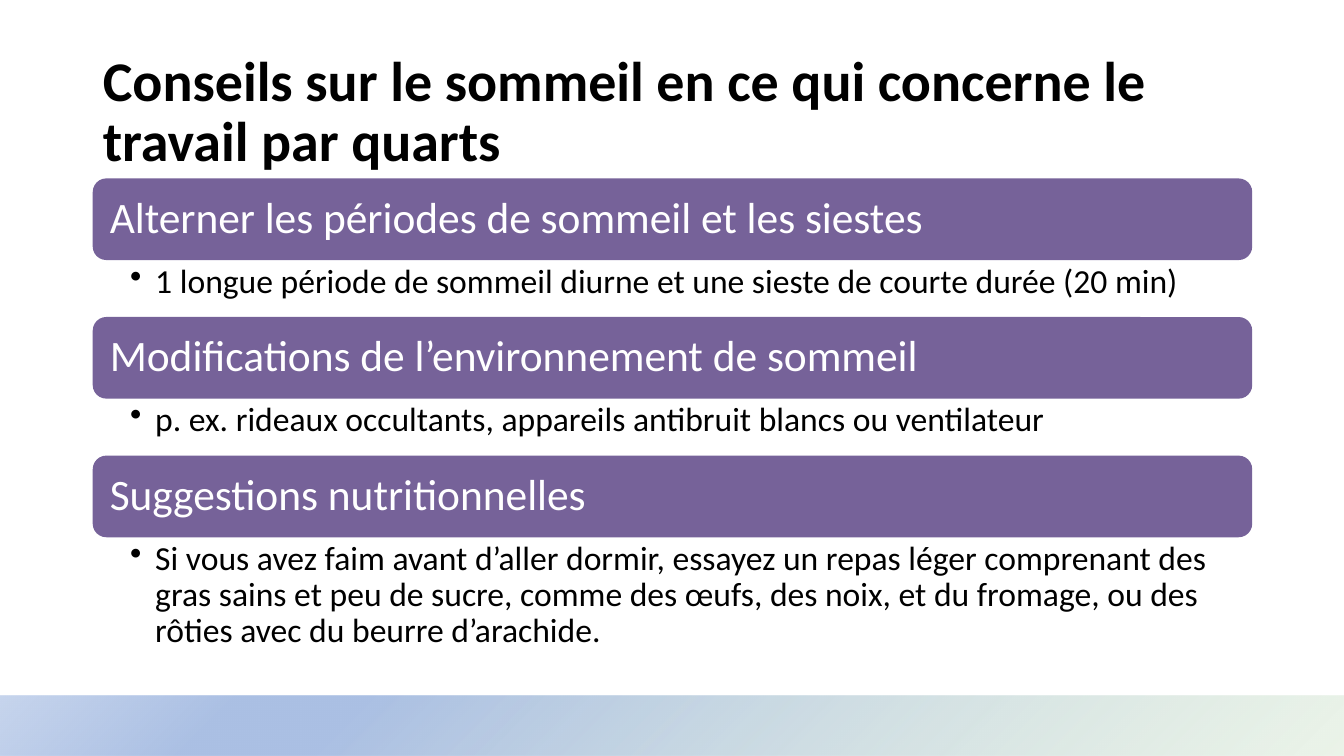
import pptx
import pptx.util
import pptx.dml.color
import pptx.enum.shapes
import pptx.enum.text
from dataclasses import dataclass
from lxml import etree
from pptx.oxml.ns import qn

# Content
TITLE = "Conseils sur le sommeil en ce qui concerne le travail par quarts"
TIPS = [
    ("Alterner les périodes de sommeil et les siestes",
     "1 longue période de sommeil diurne et une sieste de courte durée (20 min)"),
    ("Modifications de l’environnement de sommeil",
     "p. ex. rideaux occultants, appareils antibruit blancs ou ventilateur"),
    ("Suggestions nutritionnelles",
     "Si vous avez faim avant d’aller dormir, essayez un repas léger comprenant "
     "des gras sains et peu de sucre, comme des œufs, des noix, et du fromage, "
     "ou des rôties avec du beurre d’arachide."),
]


@dataclass(frozen=True)
class Theme:
    font: str = "Calibri"
    ink: str = "000000"
    pale: str = "FFFFFF"
    bar: str = "766299"
    title: int = 40
    head: int = 31
    note: int = 24
    # Footer gradient: position %, colour, opacity %
    fade: tuple = ((0, "D6E8D1", 47), (74, "ABC0E4", 100),
                   (83, "ABC0E4", 100), (100, "C7D5ED", 100))


# Grid, in inches
WIDE, HIGH = 13.33, 7.5
LEFT, SPAN = 0.92, 11.5
TOP, STEP, BAR = 1.77, 1.375, 0.81
END = 6.52
FOOT = 0.08 * HIGH

LOOK = Theme()
Inches = pptx.util.Inches
Shape = pptx.enum.shapes.MSO_SHAPE
Anchor = pptx.enum.text.MSO_ANCHOR


def box(*spot):
    return [Inches(n) for n in spot]


def write(shape, text, size, color=LOOK.ink, bold=False, pad=(0.1, 0.05, 0.1, 0.05),
          anchor=Anchor.MIDDLE, bullet=False):
    frame = shape.text_frame
    frame.word_wrap = True
    frame.auto_size = pptx.enum.text.MSO_AUTO_SIZE.NONE
    frame.vertical_anchor = anchor
    (frame.margin_left, frame.margin_top,
     frame.margin_right, frame.margin_bottom) = box(*pad)
    para = frame.paragraphs[0]
    para.text = text
    para.alignment = pptx.enum.text.PP_ALIGN.LEFT
    para.line_spacing = 0.9
    if bullet:
        props = para._p.get_or_add_pPr()
        props.set("marL", str(Inches(0.25)))
        props.set("indent", str(Inches(-0.25)))
        etree.SubElement(props, qn("a:buChar"), char="•")
    font = para.runs[0].font
    font.name, font.size, font.bold = LOOK.font, pptx.util.Pt(size), bold
    font.color.rgb = pptx.dml.color.RGBColor.from_string(color)


def block(slide, kind, spot, color):
    shape = slide.shapes.add_shape(kind, *box(*spot))
    shape.shadow.inherit = False
    shape.fill.solid()
    shape.fill.fore_color.rgb = pptx.dml.color.RGBColor.from_string(color)
    shape.line.fill.background()
    return shape


def shade(shape, stops):
    """Radial gradient spreading from the bottom right corner."""
    grad = etree.Element(qn("a:gradFill"), rotWithShape="1")
    steps = etree.SubElement(grad, qn("a:gsLst"))
    for place, color, solid in stops:
        stop = etree.SubElement(steps, qn("a:gs"), pos=str(place * 1000))
        tint = etree.SubElement(stop, qn("a:srgbClr"), val=color)
        if solid < 100:
            etree.SubElement(tint, qn("a:alpha"), val=str(solid * 1000))
    way = etree.SubElement(grad, qn("a:path"), path="circle")
    etree.SubElement(way, qn("a:fillToRect"), l="100000", t="100000")
    plain = shape._element.spPr.find(qn("a:solidFill"))
    plain.getparent().replace(plain, grad)


def main():
    deck = pptx.Presentation()
    deck.slide_width, deck.slide_height = box(WIDE, HIGH)
    slide = deck.slides.add_slide(deck.slide_layouts[5])

    # Footer band
    band = block(slide, Shape.RECTANGLE, (0, HIGH - FOOT, WIDE, FOOT), LOOK.pale)
    shade(band, LOOK.fade)

    # Title
    title = slide.shapes.title
    title.left, title.top, title.width, title.height = box(LEFT, 0.4, SPAN, 1.45)
    write(title, TITLE, LOOK.title, bold=True)

    # Tips: a bar, then its note down to the next bar
    for row, (head, note) in enumerate(TIPS):
        top = TOP + row * STEP
        low = END if row == len(TIPS) - 1 else top + STEP
        bar = block(slide, Shape.ROUNDED_RECTANGLE, (LEFT, top, SPAN, BAR), LOOK.bar)
        write(bar, head, LOOK.head, color=LOOK.pale, pad=(0.13,) * 4)
        body = slide.shapes.add_textbox(*box(LEFT, top + BAR, SPAN, low - top - BAR))
        write(body, note, LOOK.note, pad=(0.37, 0.04, 0.24, 0.04),
              anchor=Anchor.TOP, bullet=True)

    deck.save("out.pptx")


if __name__ == "__main__":
    main()
